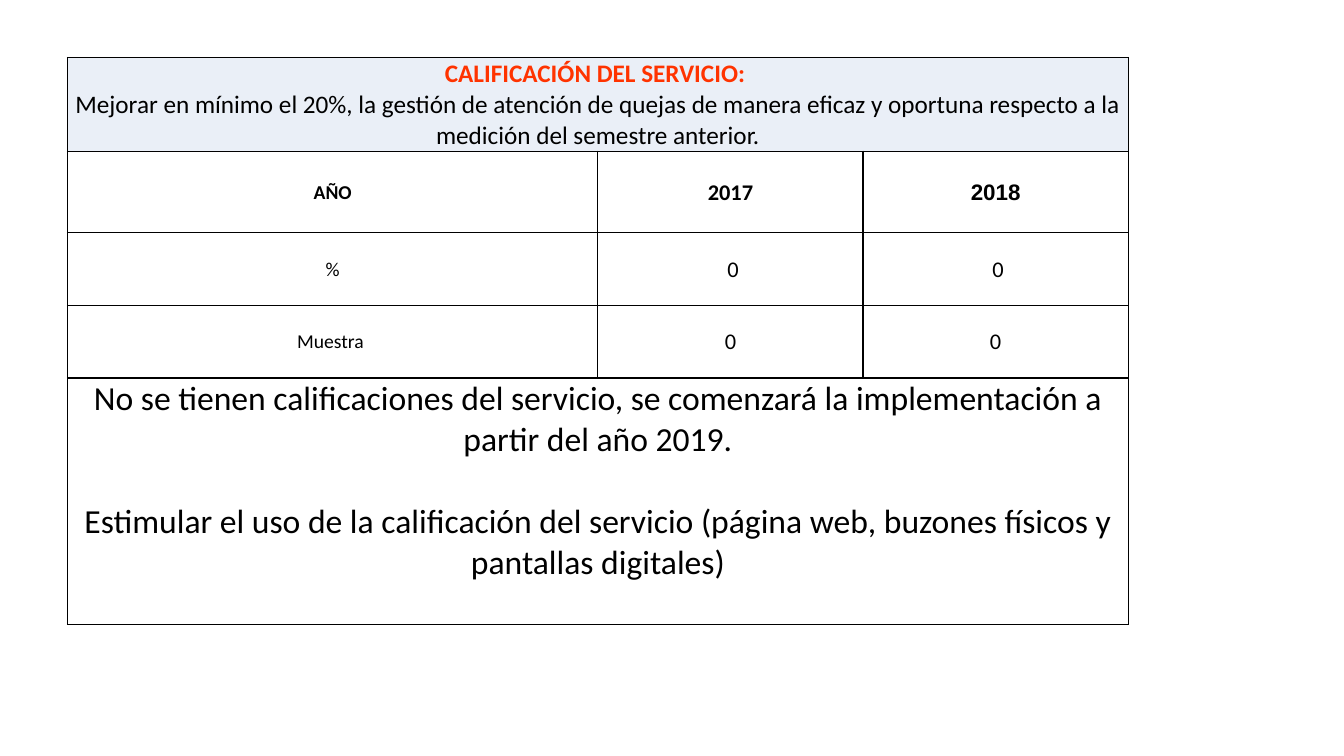
"""Build a slide with the service rating table for 2017 and 2018."""
from lxml.etree import SubElement
from pptx import Presentation
from pptx.dml.color import RGBColor
from pptx.enum.text import MSO_ANCHOR, PP_ALIGN
from pptx.oxml.ns import qn
from pptx.util import Inches, Pt

COLORS = {"text": "000000", "heading": "FF3300", "band": "EAEFF7",
          "cell": "FFFFFF", "border": "000000"}

GOAL = [
    ("CALIFICACIÓN DEL SERVICIO: ", 18, True, "heading"),
    ("Mejorar en mínimo el 20%, la gestión de atención de quejas de manera "
     "eficaz y oportuna respecto a la medición del semestre anterior.", 18, False, "text"),
]
RATINGS = [
    ("AÑO", "2017", "2018"),
    ("%", " 0", " 0"),
    ("Muestra ", "0", "0"),
]
REMARKS = [
    ("No se tienen calificaciones del servicio, se comenzará la implementación "
     "a partir del año 2019.", 24, False, "text"),
    ("Estimular el uso de la calificación del servicio (página web, buzones "
     "físicos y pantallas digitales)", 24, False, "text"),
]
COLUMN_WIDTHS = [5.26, 2.63, 2.63]
ROW_HEIGHTS = [0.93, 0.81, 0.72, 0.72, 2.45]
LEFT, TOP = 0.67, 0.57
REMARK_GAP = 29.3


def add_borders(cell):
    """Draw a thin line on all four sides of a cell."""
    properties = cell._tc.get_or_add_tcPr()
    for position, side in enumerate(("lnL", "lnR", "lnT", "lnB")):
        line = SubElement(properties, qn(f"a:{side}"), w=str(Pt(1)))
        fill = SubElement(line, qn("a:solidFill"))
        SubElement(fill, qn("a:srgbClr"), val=COLORS["border"])
        properties.insert(position, line)


def write_cell(cell, lines, font="Calibri", gap=0):
    """Write centred paragraphs given as text, size, bold and colour."""
    frame = cell.text_frame
    for index, (text, size, bold, color) in enumerate(lines):
        paragraph = frame.add_paragraph() if index else frame.paragraphs[0]
        paragraph.text = text
        paragraph.alignment = PP_ALIGN.CENTER
        if index and gap:
            paragraph.space_before = Pt(gap)
        paragraph.font.name = font
        paragraph.font.size = Pt(size)
        paragraph.font.bold = bold
        paragraph.font.color.rgb = RGBColor.from_string(COLORS[color])


def main():
    """Create the presentation and save it."""
    deck = Presentation()
    deck.slide_width, deck.slide_height = Inches(13.33), Inches(7.5)
    slide = deck.slides.add_slide(deck.slide_layouts[6])
    table = slide.shapes.add_table(
        len(ROW_HEIGHTS), len(COLUMN_WIDTHS), Inches(LEFT), Inches(TOP),
        Inches(sum(COLUMN_WIDTHS)), Inches(sum(ROW_HEIGHTS))).table
    table.first_row = table.horz_banding = False
    for column, width in zip(table.columns, COLUMN_WIDTHS):
        column.width = Inches(width)
    for row, height in zip(table.rows, ROW_HEIGHTS):
        row.height = Inches(height)

    last_row, last_column = len(ROW_HEIGHTS) - 1, len(COLUMN_WIDTHS) - 1
    for row_index, row in enumerate(table.rows):
        for cell in row.cells:
            cell.margin_left = cell.margin_right = cell.margin_top = Inches(0.01)
            cell.margin_bottom = 0
            cell.vertical_anchor = MSO_ANCHOR.MIDDLE
            cell.fill.solid()
            color = COLORS["cell" if row_index else "band"]
            cell.fill.fore_color.rgb = RGBColor.from_string(color)
            add_borders(cell)
    for row_index in (0, last_row):
        table.cell(row_index, 0).merge(table.cell(row_index, last_column))

    write_cell(table.cell(0, 0), GOAL)
    for row_index, values in enumerate(RATINGS, start=1):
        for column_index, value in enumerate(values):
            size = 16 if column_index else 14
            font = "Arial" if value == "2018" else "Calibri"
            write_cell(table.cell(row_index, column_index),
                       [(value, size, row_index == 1, "text")], font)
    remarks = table.cell(last_row, 0)
    remarks.vertical_anchor = MSO_ANCHOR.TOP
    write_cell(remarks, REMARKS, gap=REMARK_GAP)
    deck.save("out.pptx")


if __name__ == "__main__":
    main()
